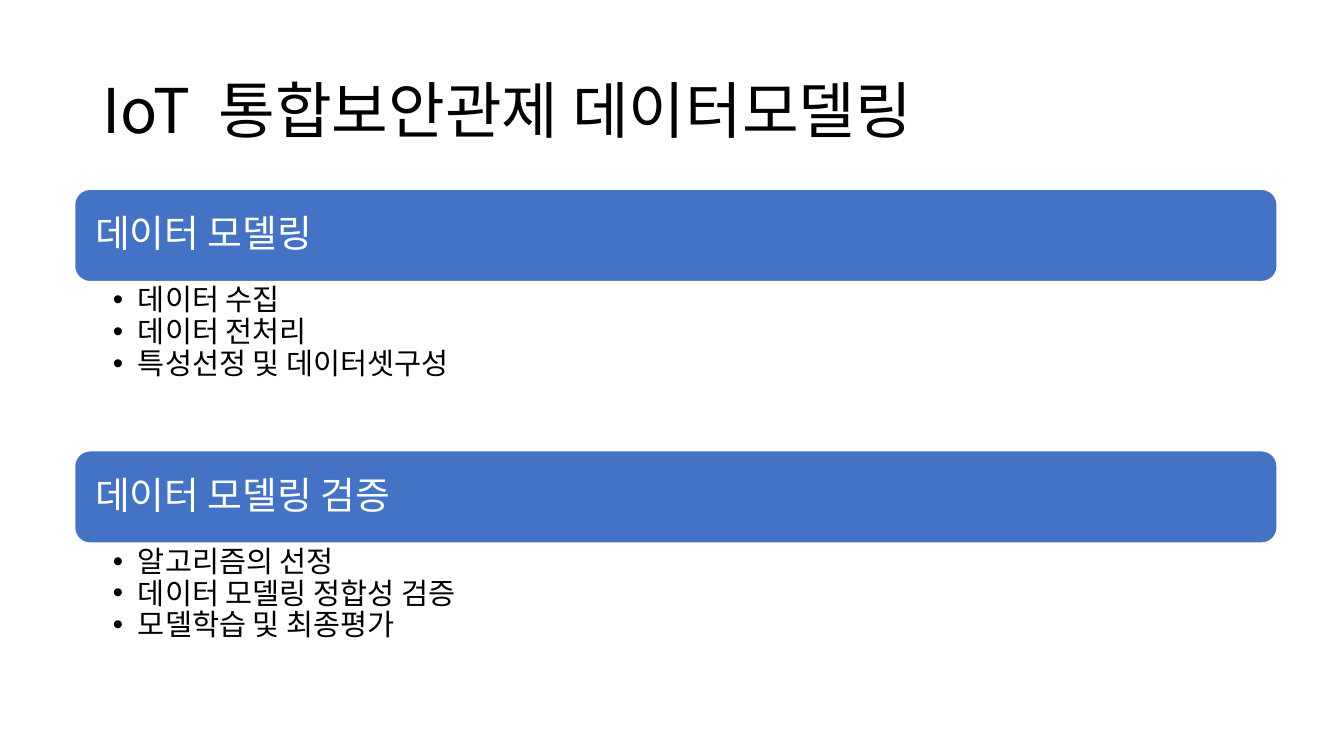
from lxml.etree import SubElement
from pptx import Presentation
from pptx.dml.color import RGBColor
from pptx.enum.shapes import MSO_SHAPE
from pptx.enum.text import MSO_ANCHOR, MSO_AUTO_SIZE, PP_ALIGN
from pptx.oxml.ns import qn
from pptx.util import Pt

TITLE = "IoT  통합보안관제 데이터모델링"
SECTIONS = [
    ("데이터 모델링", ["데이터 수집", "데이터 전처리", "특성선정 및 데이터셋구성"]),
    ("데이터 모델링 검증", ["알고리즘의 선정", "데이터 모델링 정합성 검증", "모델학습 및 최종평가"]),
]
LEFT, WIDTH = 53.3, 859
FIRST_TOP, SECTION_PITCH = 135.2, 186.8
BAND_HEIGHT, LIST_HEIGHT = 66, 121


def rgb(hex_colour):
    return RGBColor.from_string(hex_colour)


def apply(target, values):
    """Set each attribute named in the dict."""
    for name, value in values.items():
        setattr(target, name, value)


class SlideBuilder:
    font = "Noto Sans CJK KR"
    dark, light, accent = "000000", "FFFFFF", "4472C4"
    paragraph_format = {"alignment": PP_ALIGN.LEFT, "line_spacing": 0.9,
                        "space_before": Pt(0), "space_after": Pt(0)}

    def __init__(self, slide):
        self.slide = slide

    def fill_text(self, frame, lines, size, colour, anchor, insets):
        """Fill a text frame, one paragraph per line; insets run left, top, right, bottom."""
        sides = ("margin_left", "margin_top", "margin_right", "margin_bottom")
        apply(frame, {"word_wrap": True, "auto_size": MSO_AUTO_SIZE.NONE, "vertical_anchor": anchor})
        apply(frame, dict(zip(sides, map(Pt, insets))))
        for index, line in enumerate(lines):
            paragraph = frame.paragraphs[0] if index == 0 else frame.add_paragraph()
            apply(paragraph, self.paragraph_format)
            run = paragraph.add_run()
            run.text = line
            apply(run.font, {"size": Pt(size), "name": self.font})
            run.font.color.rgb = rgb(colour)
            east_asian = SubElement(run._r.get_or_add_rPr(), qn("a:ea"))
            east_asian.set("typeface", self.font)

    def title(self, text):
        heading = self.slide.shapes.title
        apply(heading, {"left": Pt(66), "top": Pt(28.8), "width": Pt(828), "height": Pt(104.4)})
        self.fill_text(heading.text_frame, [text], 44, self.dark,
                       MSO_ANCHOR.MIDDLE, (7.2, 3.6, 7.2, 3.6))

    def band(self, text, top):
        band = self.slide.shapes.add_shape(
            MSO_SHAPE.ROUNDED_RECTANGLE, Pt(LEFT), Pt(top), Pt(WIDTH), Pt(BAND_HEIGHT))
        band.shadow.inherit = False
        band.fill.solid()
        band.fill.fore_color.rgb = rgb(self.accent)
        band.line.color.rgb = rgb(self.light)
        band.line.width = Pt(1)
        self.fill_text(band.text_frame, [text], 27, self.light,
                       MSO_ANCHOR.MIDDLE, (11.4, 8, 11.4, 8))

    def bullets(self, items, top):
        box = self.slide.shapes.add_textbox(Pt(LEFT), Pt(top), Pt(WIDTH), Pt(LIST_HEIGHT))
        self.fill_text(box.text_frame, items, 21, self.dark,
                       MSO_ANCHOR.TOP, (27.3, 2.7, 15, 2.7))
        for paragraph in box.text_frame.paragraphs:
            paragraph.level = 1
            properties = paragraph._p.get_or_add_pPr()
            properties.set("marL", str(Pt(18)))
            properties.set("indent", str(Pt(-18)))
            SubElement(properties, qn("a:buFont")).set("typeface", "Arial")
            SubElement(properties, qn("a:buChar")).set("char", "•")


def main():
    deck = Presentation()
    apply(deck, {"slide_width": Pt(960), "slide_height": Pt(540)})
    builder = SlideBuilder(deck.slides.add_slide(deck.slide_layouts[5]))
    builder.title(TITLE)
    for index, (heading, items) in enumerate(SECTIONS):
        top = FIRST_TOP + index * SECTION_PITCH
        builder.band(heading, top)
        builder.bullets(items, top + BAND_HEIGHT)
    deck.save("out.pptx")


if __name__ == "__main__":
    main()
